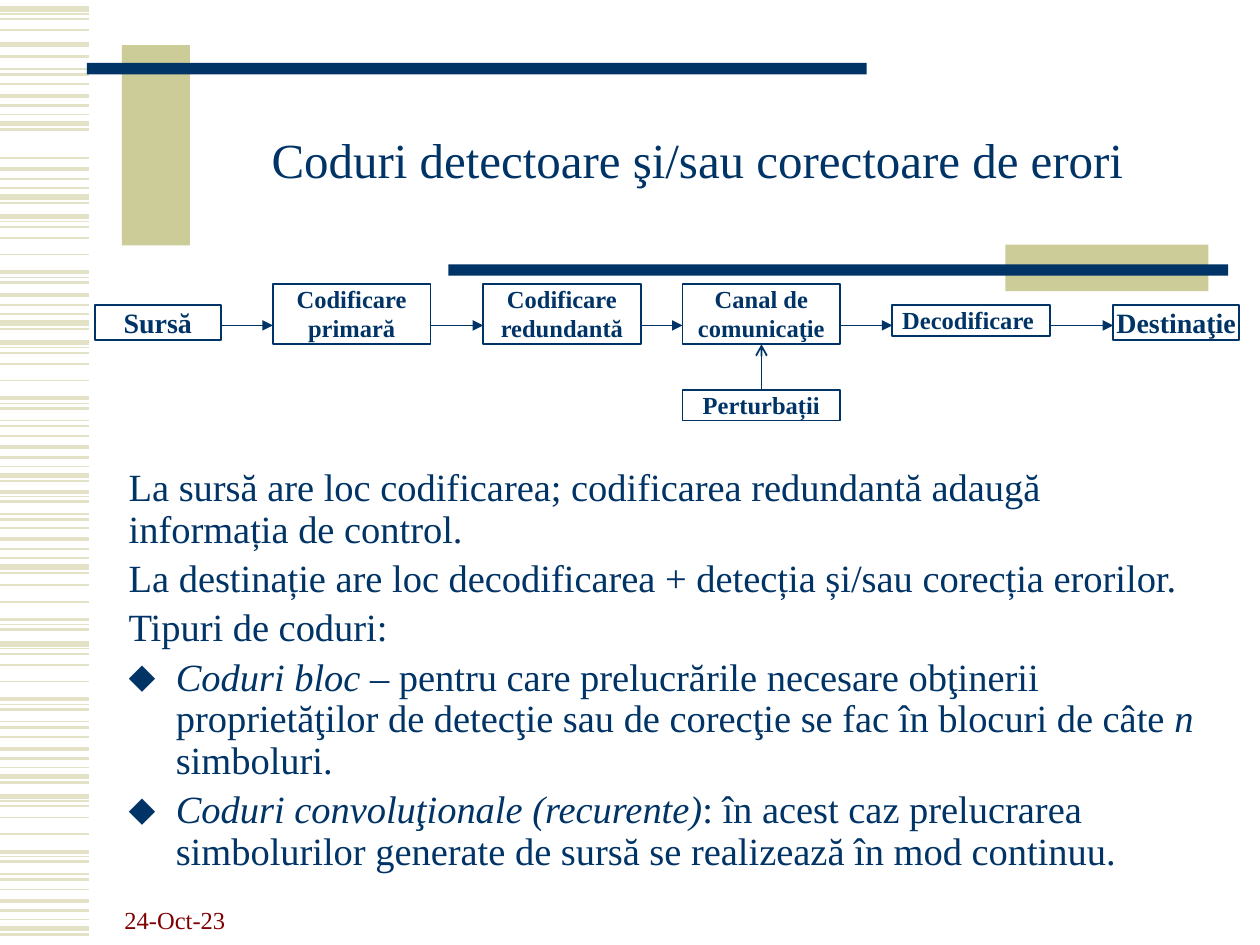
from itertools import pairwise

from lxml import etree
from pptx import Presentation
from pptx.dml.color import RGBColor
from pptx.enum.shapes import MSO_CONNECTOR, MSO_SHAPE
from pptx.enum.text import MSO_ANCHOR, MSO_AUTO_SIZE, PP_ALIGN
from pptx.oxml.ns import qn
from pptx.util import Cm, Pt

RECTANGLE = MSO_SHAPE.RECTANGLE
STRAIGHT = MSO_CONNECTOR.STRAIGHT
TOP, MIDDLE, BOTTOM = MSO_ANCHOR.TOP, MSO_ANCHOR.MIDDLE, MSO_ANCHOR.BOTTOM
LEFT, CENTER = PP_ALIGN.LEFT, PP_ALIGN.CENTER
NO_AUTOFIT = MSO_AUTO_SIZE.NONE

COLORS = {"navy": "003366", "khaki": "CCCC99", "stripe": "E3E2C7", "date": "800000"}
FONT = "Times New Roman"

# Stripe bands: (offset in cm, weight in points)
SHORT_BAND = [(0, 1), (0.23, 2.25), (0.43, 1.5), (0.61, 0.75), (0.79, 3), (0.91, 1.5)]
LONG_BAND = [(0, 3), (0.1, 0.75), (0.2, 1), (0.43, 1), (0.76, 1), (1.12, 2.25),
             (1.22, 0.75), (1.32, 1.5), (1.57, 0.75), (1.68, 1.5)]
# Where each band starts in cm, and which of its stripes are present
BANDS = [(top, SHORT_BAND) for top in (1.7, 3.18, 8.79, 10.64, 14.86, 17.93)]
BANDS += [(top, LONG_BAND) for top in (6.91, 12.98, 16.05)]
BANDS += [
    (5.72, SHORT_BAND[1:]),
    (0.18, LONG_BAND[:4]),
    (0.89, [(0, 3)]),
    (-0.18, LONG_BAND[7:]),
    (4.37, LONG_BAND[:8]),
    (8.79, LONG_BAND[5:]),
    (11.37, LONG_BAND[3:8]),
]

# Decoration: left, top, width, height, colour
BARS = [
    (2.46, 0.91, 1.37, 4.04, "khaki"),
    (1.75, 1.27, 15.72, 0.23, "navy"),
    (20.27, 4.93, 4.09, 0.94, "khaki"),
    (9.04, 5.33, 15.72, 0.23, "navy"),
]

# Transmission chain: text, left, top, width, height, text size
CHAIN = [
    ("Sursă", 1.91, 6.15, 2.54, 0.71, 16),
    ("Codificare primară", 5.5, 5.72, 3.18, 1.22, 14),
    ("Codificare redundantă", 9.74, 5.72, 3.18, 1.22, 14),
    ("Canal de comunicaţie", 13.76, 5.72, 3.18, 1.22, 14),
    ("Decodificare ", 17.99, 6.15, 3.18, 0.62, 14),
    ("Destinaţie", 22.44, 6.15, 2.54, 0.71, 16),
]
CHAIN_AXIS = 6.56

# Body paragraphs: bulleted or not, then (text, italic) runs
BODY = [
    (False, [("La sursă are loc codificarea; codificarea redundantă adaugă "
              "informația de control.", False)]),
    (False, [("La destinație are loc decodificarea + detecția și/sau corecția erorilor.",
              False)]),
    (False, [("Tipuri de coduri:", False)]),
    (True, [("Coduri bloc", True),
            (" – pentru care prelucrările necesare obţinerii proprietăţilor de detecţie "
             "sau de corecţie se fac în blocuri de câte ", False),
            ("n ", True), ("simboluri.", False)]),
    (True, [("Coduri convoluţionale (recurente)", True),
            (": în acest caz prelucrarea simbolurilor generate de sursă se realizează "
             "în mod continuu.", False)]),
]


def rgb(name):
    return RGBColor.from_string(COLORS[name])


def add_text(para, text, size=14, color="navy", bold=False, italic=False):
    span = para.add_run()
    span.text = text
    span.font.name = FONT
    span.font.size = Pt(size)
    span.font.bold = bold
    span.font.italic = italic
    span.font.color.rgb = rgb(color)


def set_bullet(para, bulleted):
    """Give the paragraph a hanging diamond, or no bullet and no indent."""
    properties = para._p.get_or_add_pPr()
    indent = Cm(0.95) if bulleted else 0
    properties.set("marL", str(indent))
    properties.set("indent", str(-indent))
    if bulleted:
        bullet_color = etree.SubElement(properties, qn("a:buClr"))
        etree.SubElement(bullet_color, qn("a:srgbClr"), val=COLORS["navy"])
        etree.SubElement(properties, qn("a:buChar"), char="⬥")
    else:
        etree.SubElement(properties, qn("a:buNone"))


class SlideBuilder:
    def __init__(self, deck):
        self.page = deck.slides.add_slide(deck.slide_layouts[1])

    def line(self, start, end, color, weight, head=None):
        line = self.page.shapes.add_connector(STRAIGHT, *map(Cm, start + end))
        line.line.color.rgb = rgb(color)
        line.line.width = Pt(weight)
        if head:
            etree.SubElement(line.line._get_or_add_ln(), qn("a:tailEnd"), type=head)
        etree.SubElement(line._element.spPr, qn("a:effectLst"))

    def bar(self, left, top, width, height, color):
        bar = self.page.shapes.add_shape(RECTANGLE, *map(Cm, (left, top, width, height)))
        bar.shadow.inherit = False
        bar.fill.solid()
        bar.fill.fore_color.rgb = rgb(color)
        bar.line.fill.background()

    def block(self, text, left, top, width, height, size):
        block = self.page.shapes.add_shape(RECTANGLE, *map(Cm, (left, top, width, height)))
        block.shadow.inherit = False
        block.fill.background()
        block.line.color.rgb = rgb("navy")
        block.line.width = Pt(1)
        frame = block.text_frame
        frame.margin_left = frame.margin_right = frame.margin_top = frame.margin_bottom = 0
        para = self.frame_start(block, TOP, CENTER)
        add_text(para, text, size=size, bold=True)

    def frame_start(self, box, anchor, align):
        """Set up the text frame of a box and return its first paragraph."""
        frame = box.text_frame
        frame.word_wrap = True
        frame.auto_size = NO_AUTOFIT
        frame.vertical_anchor = anchor
        frame.paragraphs[0].alignment = align
        return frame.paragraphs[0]

    def place(self, box, left, top, width, height):
        box.left, box.top, box.width, box.height = map(Cm, (left, top, width, height))

    def title(self, text):
        box = self.page.shapes.title
        self.place(box, 3.81, 1.7, 20.5, 3.18)
        para = self.frame_start(box, MIDDLE, CENTER)
        para.line_spacing = 0.85
        add_text(para, text, size=28)

    def body(self, items):
        box = self.page.placeholders[1]
        self.place(box, 2.34, 9.32, 22.02, 8.89)
        first = self.frame_start(box, TOP, LEFT)
        for index, (bulleted, spans) in enumerate(items):
            para = box.text_frame.add_paragraph() if index else first
            para.line_spacing = 0.9
            para.space_before = Pt(4.4)
            set_bullet(para, bulleted)
            for text, italic in spans:
                add_text(para, text, size=22, italic=italic)

    def date(self, text):
        box = self.page.shapes.add_textbox(*map(Cm, (2.26, 17.7, 5.28, 1.27)))
        add_text(self.frame_start(box, BOTTOM, LEFT), text, color="date")


def main():
    deck = Presentation()
    deck.slide_width, deck.slide_height = Cm(25.4), Cm(19.05)
    slide = SlideBuilder(deck)

    for top, band in BANDS:
        for offset, weight in band:
            slide.line((0, top + offset), (1.8, top + offset), "stripe", weight)
    for bar in BARS:
        slide.bar(*bar)

    slide.date("24-Oct-23")
    slide.title("Coduri detectoare şi/sau corectoare de erori")
    slide.body(BODY)

    for block in CHAIN:
        slide.block(*block)
    for (_, left, _, width, *_), (_, next_left, *_) in pairwise(CHAIN):
        slide.line((left + width, CHAIN_AXIS), (next_left, CHAIN_AXIS),
                   "navy", 1, head="triangle")

    _, left, top, width, height, size = CHAIN[3]
    noise_top = 7.87
    slide.block("Perturbații", left, noise_top, width, 0.61, size)
    center = left + width / 2
    slide.line((center, noise_top), (center, top + height), "navy", 1, head="arrow")

    deck.save("out.pptx")


if __name__ == "__main__":
    main()
